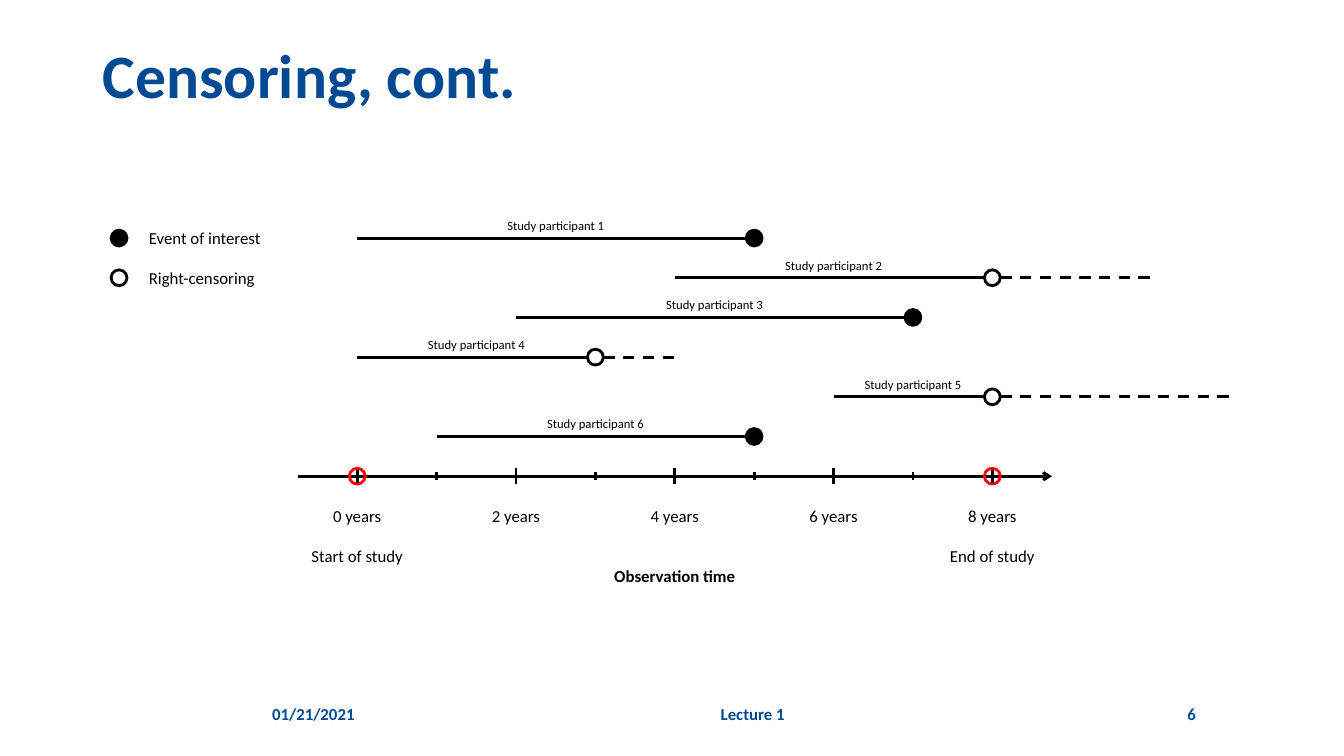
import pptx
import pptx.util
import pptx.dml.color
import pptx.enum.dml
import pptx.enum.shapes
import pptx.enum.text
import pptx.oxml.ns
from lxml import etree

Cm, Inches, Pt = pptx.util.Cm, pptx.util.Inches, pptx.util.Pt
RGBColor = pptx.dml.color.RGBColor
ALIGN = pptx.enum.text.PP_ALIGN
ANCHOR = pptx.enum.text.MSO_ANCHOR
DASH = pptx.enum.dml.MSO_LINE.DASH
qn = pptx.oxml.ns.qn

# Content
TITLE = "Censoring, cont."
# Left, width (inches), text, alignment
FOOTER = [(2.6, 1.31, "01/21/2021", ALIGN.LEFT),
          (4.07, 6.79, "Lecture 1", ALIGN.CENTER),
          (11.02, 0.94, "6", ALIGN.RIGHT)]
# Entry year, last observed year, year the dashes reach (None: event of interest)
PARTICIPANTS = [(0, 5, None), (4, 8, 10), (2, 7, None),
                (0, 3, 4), (6, 8, 11), (1, 5, None)]
LEGEND = [("Event of interest", True), ("Right-censoring", False)]
STUDY_LIMITS = {0: "Start of study", 8: "End of study"}
AXIS_TITLE = "Observation time"

BLUE = RGBColor(0x00, 0x4A, 0x93)
BLACK = RGBColor(0x00, 0x00, 0x00)
RED = RGBColor(0xFF, 0x00, 0x00)
FONT = "Calibri"

# Timeline grid in centimetres: two per year, one per row
YEAR_ZERO, YEAR_WIDTH, LAST_YEAR = 9, 2, 8
FIRST_ROW, AXIS_Y = 6, 12
AXIS_START, AXIS_END = 7.5, 26.5
LEGEND_X = 3
RADIUS = 0.2

prs = pptx.Presentation()
prs.slide_width, prs.slide_height = Inches(13.33), Inches(7.5)
s = prs.slides.add_slide(prs.slide_layouts[5])


def year_x(year):
    return YEAR_ZERO + year * YEAR_WIDTH


def style(p, size, color, bold, align):
    p.alignment = align
    font = p.runs[0].font
    font.name, font.size, font.bold = FONT, Pt(size), bold
    font.color.rgb = color


def add_text(left, top, width, height, text, size=12, color=BLACK, bold=False,
             align=ALIGN.CENTER, anchor=ANCHOR.MIDDLE):
    tf = s.shapes.add_textbox(left, top, width, height).text_frame
    tf.word_wrap = False
    tf.vertical_anchor = anchor
    tf.text = text
    style(tf.paragraphs[0], size, color, bold, align)


def add_label(center, top, width, text, **look):
    add_text(Cm(center - width / 2), Cm(top), Cm(width), Cm(1), text, **look)


def add_line(x1, y1, x2, y2, dashed=False, arrow=False):
    line = s.shapes.add_connector(pptx.enum.shapes.MSO_CONNECTOR.STRAIGHT,
                                  Cm(x1), Cm(y1), Cm(x2), Cm(y2))
    line.line.color.rgb, line.line.width = BLACK, Pt(2)
    if dashed:
        line.line.dash_style = DASH
    if arrow:
        etree.SubElement(line.line._get_or_add_ln(), qn("a:tailEnd"), type="arrow")
    etree.SubElement(line._element.spPr, qn("a:effectLst"))


def add_circle(x, y, filled=False, color=BLACK):
    sp = s.shapes.add_shape(pptx.enum.shapes.MSO_SHAPE.OVAL, Cm(x - RADIUS),
                            Cm(y - RADIUS), Cm(2 * RADIUS), Cm(2 * RADIUS))
    sp.shadow.inherit = False
    if filled:
        sp.fill.solid()
        sp.fill.fore_color.rgb = color
    else:
        sp.fill.background()
    sp.line.color.rgb, sp.line.width = color, Pt(2)


# Title
title = s.shapes.title
title.left, title.top = Inches(0.92), Inches(0.4)
title.width, title.height = Inches(11.5), Inches(1.45)
tf = title.text_frame
tf.text = TITLE
tf.auto_size = pptx.enum.text.MSO_AUTO_SIZE.NONE
tf.vertical_anchor = ANCHOR.TOP
tf.paragraphs[0].line_spacing = 0.9
style(tf.paragraphs[0], 44, BLUE, True, ALIGN.LEFT)

# Footer
for left, width, text, align in FOOTER:
    add_text(Inches(left), Inches(6.88), Inches(width), Inches(0.4), text,
             color=BLUE, bold=True, align=align)

# Time axis with long ticks on even years
add_line(AXIS_START, AXIS_Y, AXIS_END, AXIS_Y, arrow=True)
for year in range(LAST_YEAR + 1):
    x = year_x(year)
    even = year % 2 == 0
    tick = 0.2 if even else 0.1
    add_line(x, AXIS_Y - tick, x, AXIS_Y + tick)
    if even:
        add_label(x, AXIS_Y + 0.5, 2, f"{year} years")
for year, text in STUDY_LIMITS.items():
    add_label(year_x(year), AXIS_Y + 1.5, 3, text)
    add_circle(year_x(year), AXIS_Y, color=RED)
add_label(year_x(LAST_YEAR / 2), AXIS_Y + 2, 4, AXIS_TITLE, bold=True)

# Participants
for i, (entry, last, dashes_to) in enumerate(PARTICIPANTS):
    y = FIRST_ROW + i
    start, stop = year_x(entry), year_x(last)
    add_line(start, y, stop - RADIUS, y)
    add_label((start + stop) / 2, y - 1, 3, f"Study participant {i + 1}",
              size=9, anchor=ANCHOR.BOTTOM)
    add_circle(stop, y, filled=dashes_to is None)
    if dashes_to is not None:
        add_line(stop + RADIUS, y, year_x(dashes_to), y, dashed=True)

# Legend
for i, (text, filled) in enumerate(LEGEND):
    y = FIRST_ROW + i
    add_circle(LEGEND_X, y, filled)
    add_label(LEGEND_X + 2.5, y - 0.5, 4, text, align=ALIGN.LEFT)

prs.save("out.pptx")
